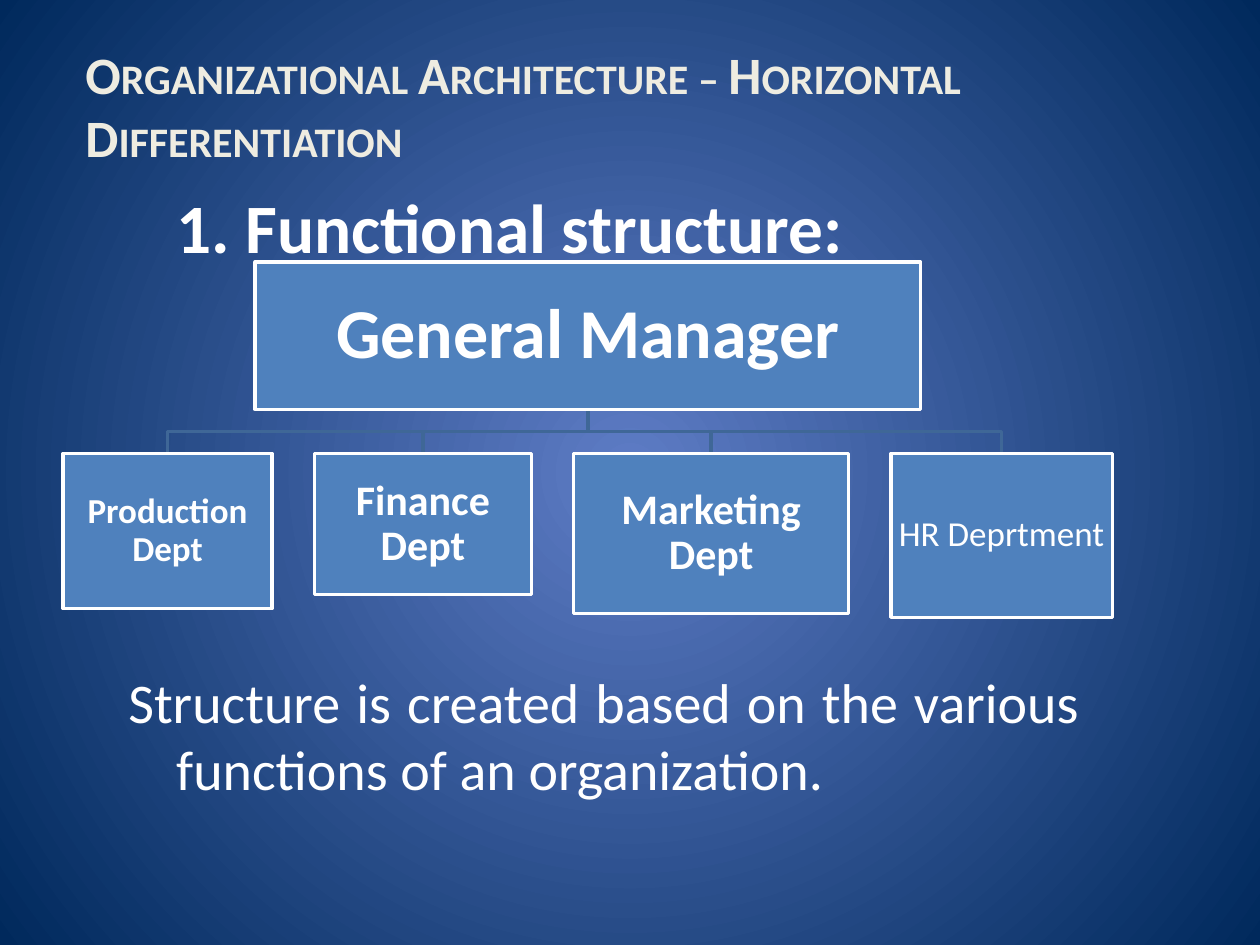
"""Build the slide on functional structure."""
import dataclasses
import pptx
import pptx.dml.color
import pptx.enum.shapes
import pptx.enum.text
import pptx.oxml
import pptx.oxml.ns
import pptx.util

ALIGN = pptx.enum.text.PP_ALIGN
ANCHOR = pptx.enum.text.MSO_ANCHOR
WIDE, HIGH = pptx.util.Inches(10), pptx.util.Inches(7.5)


@dataclasses.dataclass(frozen=True)
class Theme:
    """Colours, font and type sizes of the slide."""
    glow: str = "5E7CC5"
    edge: str = "00295C"
    box: str = "4F81BD"
    link: str = "3F6797"
    white: str = "FFFFFF"
    cream: str = "EEECE1"
    font: str = "Calibri"
    head: float = 30
    title: float = 39.6
    boss: float = 40
    large: float = 24
    small: float = 20
    body: float = 32
    line: float = 2


@dataclasses.dataclass(frozen=True)
class Box:
    """A box given as shares of the slide's width and height."""
    left: float
    top: float
    width: float
    height: float

    def frame(self):
        """Return left, top, width and height in slide units."""
        return (round(self.left * WIDE), round(self.top * HIGH),
                round(self.width * WIDE), round(self.height * HIGH))

    def middle(self):
        """Return the share at which the box is centred across."""
        return self.left + self.width / 2

    def bottom(self):
        """Return the share at which the box ends."""
        return self.top + self.height


THEME = Theme()
DEPTS = [
    ("Production Dept", 1.66, 1.23, THEME.small, True),
    ("Finance Dept", 1.72, 1.12, THEME.large, True),
    ("Marketing Dept", 2.18, 1.27, THEME.large, True),
    ("HR Deprtment", 1.76, 1.3, THEME.small, False),
]


def tint(code):
    """Return a colour from its hex code."""
    return pptx.dml.color.RGBColor.from_string(code)


def write(shape, words, size, color=THEME.white, bold=False,
          align=ALIGN.LEFT, anchor=ANCHOR.TOP, inset=None):
    """Write one run into a shape and return its paragraph and run."""
    frame = shape.text_frame
    frame.word_wrap = True
    frame.auto_size = pptx.enum.text.MSO_AUTO_SIZE.NONE
    frame.vertical_anchor = anchor
    if inset is not None:
        gap = pptx.util.Inches(inset)
        frame.margin_left = frame.margin_right = gap
        frame.margin_top = frame.margin_bottom = gap
    para = frame.paragraphs[0]
    para.alignment = align
    run = para.add_run()
    run.text = words
    run.font.name = THEME.font
    run.font.size = pptx.util.Pt(size)
    run.font.bold = bold
    run.font.color.rgb = tint(color)
    return para, run


def paint(slide):
    """Fill the backdrop with a round glow."""
    fill = slide.background.fill
    fill.gradient()
    for stop, code, place in zip(fill.gradient_stops, (THEME.glow, THEME.edge), (0, 1)):
        stop.color.rgb = tint(code)
        stop.position = place
    space = pptx.oxml.ns.nsdecls("a")
    glow = pptx.oxml.parse_xml(
        f'<a:path {space} path="circle">'
        '<a:fillToRect l="50000" t="50000" r="50000" b="50000"/></a:path>')
    line = slide.element.find(".//" + pptx.oxml.ns.qn("a:lin"))
    line.getparent().replace(line, glow)


def name(slide, box):
    """Place the slide's title."""
    title = slide.shapes.title
    title.left, title.top, title.width, title.height = box.frame()
    write(title, "1. Functional structure:", THEME.title, bold=True,
          align=ALIGN.CENTER, anchor=ANCHOR.MIDDLE)


def head(slide, box):
    """Place the topic in small capitals."""
    shape = slide.shapes.add_textbox(*box.frame())
    run = write(shape, "Organizational Architecture – Horizontal Differentiation",
                THEME.head, THEME.cream, True, anchor=ANCHOR.BOTTOM)[1]
    run.font.fill.solid()
    run.font.color.rgb = tint(THEME.cream)
    run.font._element.set("cap", "small")


def card(slide, box, words, size, bold, inset):
    """Draw one box of the chart with its label."""
    shape = slide.shapes.add_shape(
        pptx.enum.shapes.MSO_SHAPE.RECTANGLE, *box.frame())
    shape.shadow.inherit = False
    shape.fill.solid()
    shape.fill.fore_color.rgb = tint(THEME.box)
    shape.line.color.rgb = tint(THEME.white)
    shape.line.width = pptx.util.Pt(THEME.line)
    para = write(shape, words, size, bold=bold, align=ALIGN.CENTER,
                 anchor=ANCHOR.MIDDLE, inset=inset)[0]
    para.line_spacing = 0.9


def link(slide, boss, dept):
    """Draw the bent line from the boss down to a department."""
    half = (boss.bottom() + dept.top) / 2
    turns = [(boss.middle(), boss.bottom()), (boss.middle(), half),
             (dept.middle(), half), (dept.middle(), dept.top)]
    points = [(round(x * WIDE), round(y * HIGH)) for x, y in turns]
    pen = slide.shapes.build_freeform(*points[0])
    pen.add_line_segments(points[1:], close=False)
    shape = pen.convert_to_shape()
    shape.shadow.inherit = False
    shape.fill.background()
    shape.line.color.rgb = tint(THEME.link)
    shape.line.width = pptx.util.Pt(THEME.line)


def chart(slide, box):
    """Draw the boss above an evenly spaced row of departments."""
    wide = 0.528
    boss = Box(box.middle() - wide / 2, box.top, wide, 1.17 / 7.5)
    row = box.bottom() - max(dept[2] for dept in DEPTS) / 7.5
    gap = (box.width - sum(dept[1] for dept in DEPTS) / 10) / (len(DEPTS) - 1)
    left, spots = box.left, []
    for dept in DEPTS:
        spots.append(Box(left, row, dept[1] / 10, dept[2] / 7.5))
        left += dept[1] / 10 + gap
    for spot in reversed(spots):
        link(slide, boss, spot)
    card(slide, boss, "General Manager", THEME.boss, True, 0.03)
    for spot, (words, _, _, size, bold) in zip(spots, DEPTS):
        card(slide, spot, words, size, bold, 0.01)


def body(slide, box):
    """Place the closing text with a hanging indent."""
    shape = slide.shapes.add_textbox(*box.frame())
    para = write(shape, "Structure is created based on the various functions "
                 "of an organization.", THEME.body, align=ALIGN.JUSTIFY)[0]
    hang = pptx.util.Inches(0.38)
    props = para._p.get_or_add_pPr()
    props.set("marL", str(hang))
    props.set("indent", str(-hang))


def main():
    """Build and save the slide."""
    deck = pptx.Presentation()
    deck.slide_width, deck.slide_height = WIDE, HIGH
    slide = deck.slides.add_slide(deck.slide_layouts[5])
    paint(slide)
    name(slide, Box(0.017, 1.42 / 7.5, 0.775, 0.1))
    chart(slide, Box(0.05, 2.08 / 7.5, 0.833, 2.82 / 7.5))
    body(slide, Box(0.092, 0.7, 0.775, 0.2))
    head(slide, Box(0.058, 0, 0.883, 1.38 / 7.5))
    deck.save("out.pptx")


if __name__ == "__main__":
    main()
